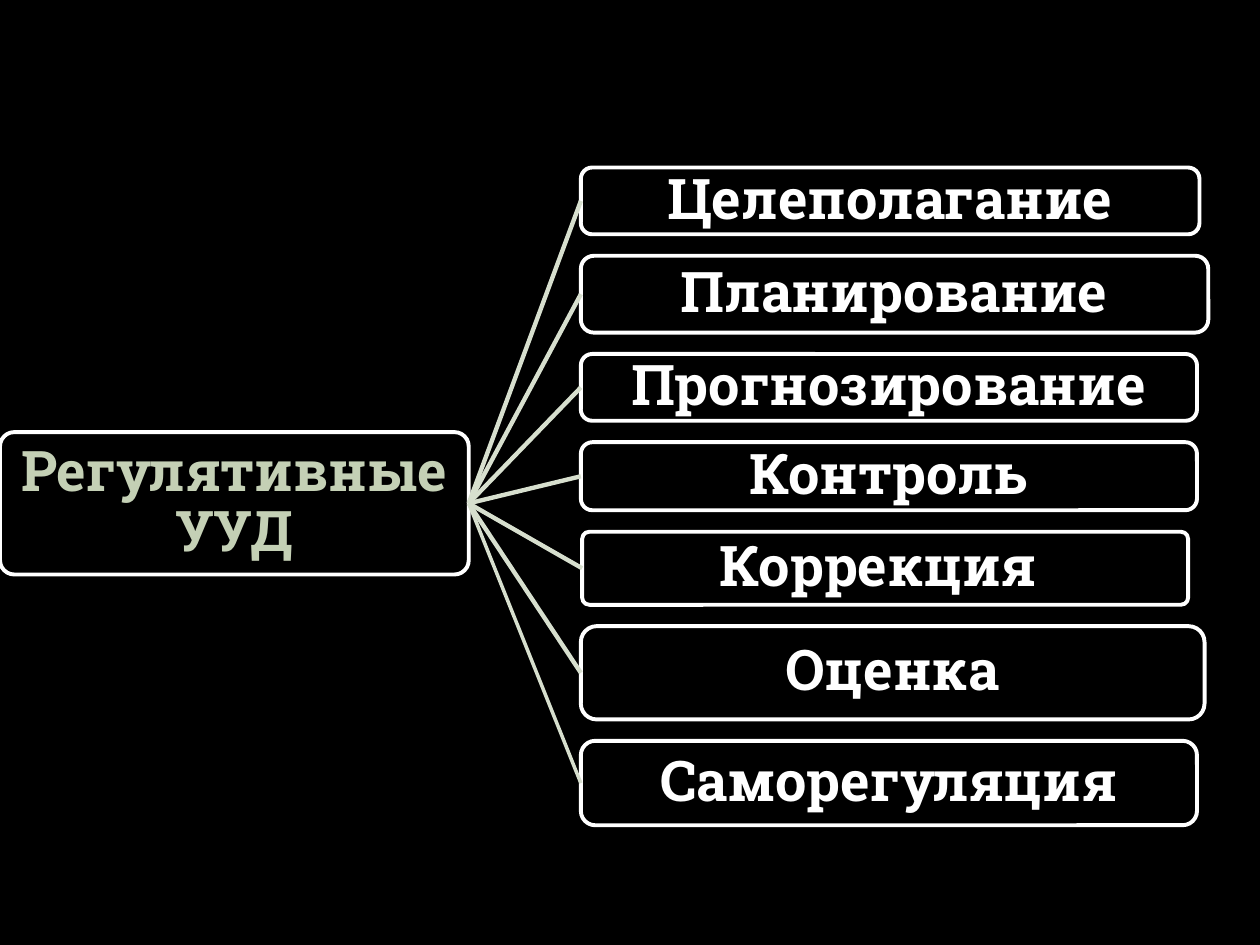
from lxml.etree import SubElement
from pptx import Presentation
from pptx.dml.color import RGBColor
from pptx.enum.shapes import MSO_CONNECTOR as Connector, MSO_SHAPE as Shape
from pptx.enum.text import MSO_ANCHOR as Anchor, PP_ALIGN as Align
from pptx.oxml.ns import qn
from pptx.util import Inches, Pt

BLACK = RGBColor(0x00, 0x00, 0x00)
WHITE = RGBColor(0xFF, 0xFF, 0xFF)
SAGE = RGBColor(0xC4, 0xD0, 0xB5)
PALE_SAGE = RGBColor(0xD7, 0xDF, 0xCE)
FONT = "Roboto Slab"

ROOT = "Регулятивные УУД"
# text, left, width, height, corner radius, connector width in points
ACTIONS = [
    ("Целеполагание", 4.61, 4.91, 0.53, 0.17, 2.5),
    ("Планирование", 4.61, 4.98, 0.61, 0.17, 2.5),
    ("Прогнозирование", 4.61, 4.89, 0.53, 0.17, 2.5),
    ("Контроль", 4.61, 4.89, 0.54, 0.17, 2.5),
    ("Коррекция ", 4.62, 4.81, 0.58, 0.10, 2.5),
    ("Оценка", 4.61, 4.95, 0.74, 0.17, 2.5),
    ("Саморегуляция", 4.61, 4.89, 0.67, 0.17, 2),
]
FIRST_TOP = 1.33
GAP = 0.17


def add_box(slide, text, left, top, width, height, radius, color):
    box = slide.shapes.add_shape(
        Shape.ROUNDED_RECTANGLE, Inches(left), Inches(top), Inches(width), Inches(height))
    box.adjustments[0] = radius
    box.shadow.inherit = False
    box.fill.solid()
    box.fill.fore_color.rgb = BLACK
    box.line.color.rgb = WHITE
    box.line.width = Pt(2.25)

    frame = box.text_frame
    frame.word_wrap = True
    frame.vertical_anchor = Anchor.MIDDLE
    frame.margin_left = frame.margin_right = Inches(0.02)
    frame.margin_top = frame.margin_bottom = Inches(0.02)
    paragraph = frame.paragraphs[0]
    paragraph.text = text
    paragraph.alignment = Align.CENTER
    paragraph.line_spacing = 0.9
    paragraph.font.name = FONT
    paragraph.font.size = Pt(32)
    paragraph.font.bold = True
    paragraph.font.color.rgb = color
    return box


def join(slide, parent, child, width):
    """Connect the parent's right side to the child's left side."""
    connector = slide.shapes.add_connector(Connector.STRAIGHT, 0, 0, 0, 0)
    connector.begin_connect(parent, 3)
    connector.end_connect(child, 1)
    connector.line.color.rgb = PALE_SAGE
    connector.line.width = Pt(width)
    SubElement(connector._element.spPr, qn("a:effectLst"))


def main():
    presentation = Presentation()
    presentation.slide_width = Inches(10)
    presentation.slide_height = Inches(7.5)
    slide = presentation.slides.add_slide(presentation.slide_layouts[6])
    slide.background.fill.solid()
    slide.background.fill.fore_color.rgb = BLACK

    root_box = add_box(slide, ROOT, 0, 3.43, 3.72, 1.13, 0.1, SAGE)
    top = FIRST_TOP
    for text, left, width, height, radius, line_width in ACTIONS:
        action_box = add_box(slide, text, left, top, width, height, radius, WHITE)
        join(slide, root_box, action_box, line_width)
        top += height + GAP

    presentation.save("out.pptx")


if __name__ == "__main__":
    main()
